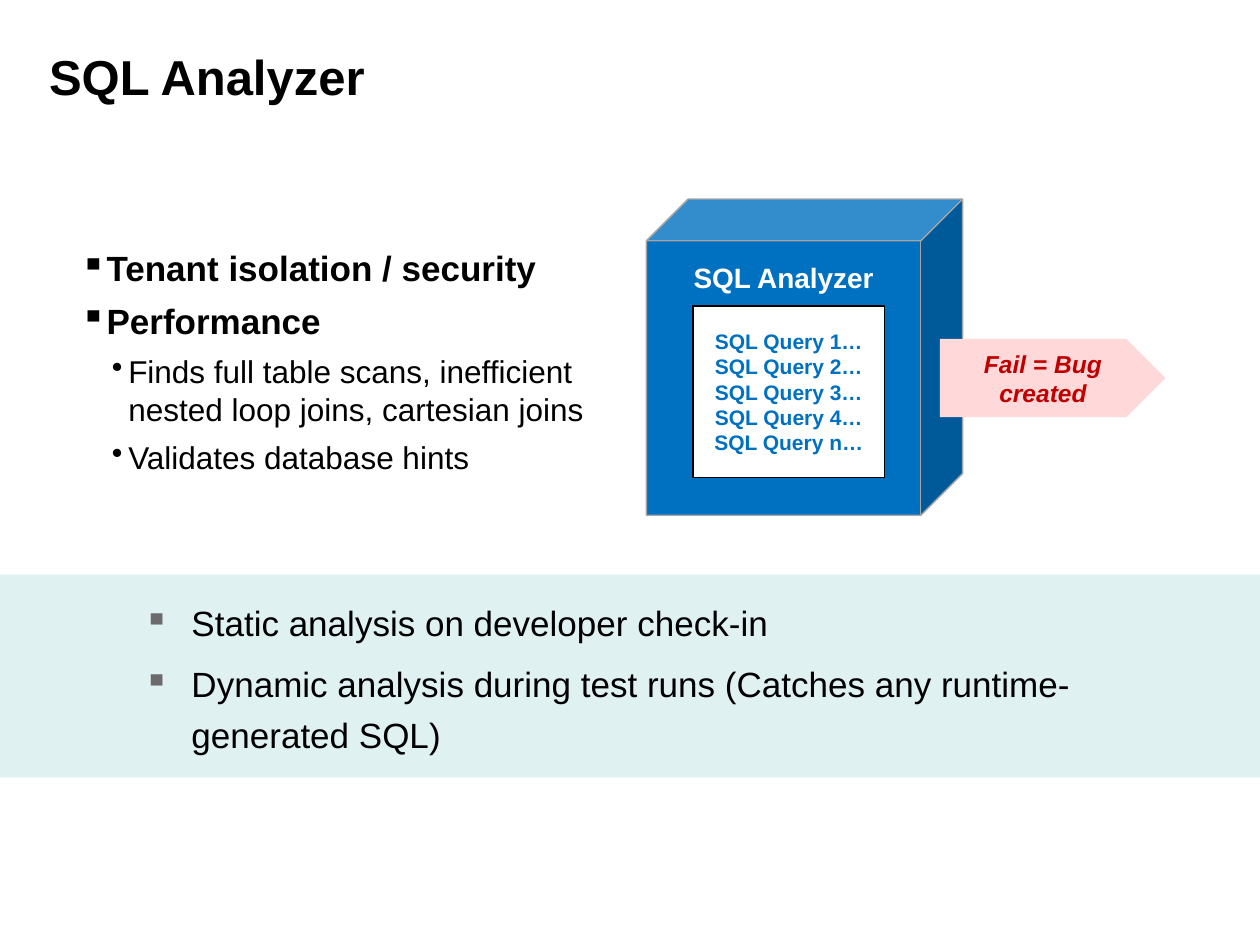
from lxml import etree
from pptx import Presentation
from pptx.dml.color import RGBColor
from pptx.enum.shapes import MSO_SHAPE
from pptx.enum.text import MSO_ANCHOR, PP_ALIGN
from pptx.oxml.ns import qn
from pptx.util import Inches, Pt

RECTANGLE, CUBE, PENTAGON = MSO_SHAPE.RECTANGLE, MSO_SHAPE.CUBE, MSO_SHAPE.PENTAGON
TOP, MIDDLE = MSO_ANCHOR.TOP, MSO_ANCHOR.MIDDLE
LEFT, CENTER = PP_ALIGN.LEFT, PP_ALIGN.CENTER

COLORS = {
    "black": "000000",
    "white": "FFFFFF",
    "band": "BBE0E3",
    "blue": "0070C0",
    "outline": "A6A6A6",
    "bullet": "6B6B6B",
    "pink": "FFD9D9",
    "red": "C00000",
}


class SlideBuilder:
    font_name = "Arial"

    def __init__(self, slide):
        self.slide = slide

    def color(self, name):
        return RGBColor.from_string(COLORS[name])

    def place(self, shape, box):
        for name, value in zip(("left", "top", "width", "height"), box):
            setattr(shape, name, Inches(value))

    def bullet(self, paragraph, character, margin, hanging, color):
        properties = paragraph._p.get_or_add_pPr()
        properties.set("marL", str(Inches(margin)))
        properties.set("indent", str(-Inches(hanging)))
        bullet_color = etree.SubElement(properties, qn("a:buClr"))
        etree.SubElement(bullet_color, qn("a:srgbClr"), val=COLORS[color])
        etree.SubElement(properties, qn("a:buChar"), char=character)

    def format_line(self, paragraph, text, size, color="black", bold=False,
                    italic=False, bullet=None, **layout):
        if bullet:
            self.bullet(paragraph, *bullet)
        for name, value in layout.items():
            setattr(paragraph, name, value)
        run = paragraph.add_run()
        run.text = text
        formats = {"name": self.font_name, "size": Pt(size), "bold": bold, "italic": italic}
        for name, value in formats.items():
            setattr(run.font, name, value)
        run.font.color.rgb = self.color(color)

    def fill_text(self, shape, lines, anchor=TOP, insets=(0.1, 0.05, 0.1, 0.05)):
        frame = shape.text_frame
        frame.word_wrap = True
        frame.vertical_anchor = anchor
        for side, inset in zip(("left", "top", "right", "bottom"), insets):
            setattr(frame, f"margin_{side}", Inches(inset))
        for index, line in enumerate(lines):
            paragraph = frame.add_paragraph() if index else frame.paragraphs[0]
            self.format_line(paragraph, **line)

    def title(self, box, text):
        title = self.slide.shapes.title
        self.place(title, box)
        line = {"text": text, "size": 28, "bold": True, "alignment": LEFT}
        self.fill_text(title, [line], MIDDLE, (0.06, 0.06, 0.1, 0.06))

    def text(self, box, lines, **options):
        shape = self.slide.shapes.add_textbox(*map(Inches, box))
        self.fill_text(shape, lines, **options)

    def shape(self, kind, box, fill, line=None, opacity=None, adjustment=None, lines=()):
        shape = self.slide.shapes.add_shape(kind, *map(Inches, box))
        shape.shadow.inherit = False
        shape.fill.solid()
        shape.fill.fore_color.rgb = self.color(fill)
        if opacity:
            fill_color = shape._element.spPr.find(qn("a:solidFill"))[0]
            etree.SubElement(fill_color, qn("a:alpha"), val=str(opacity * 1000))
        if line:
            shape.line.color.rgb = self.color(line)
            shape.line.width = Pt(0.75)
        else:
            shape.line.fill.background()
        if adjustment:
            shape.adjustments[0] = adjustment
        self.fill_text(shape, lines, MIDDLE)


def main():
    presentation = Presentation()
    presentation.slide_width = Inches(10)
    presentation.slide_height = Inches(7.5)
    slide = presentation.slides.add_slide(presentation.slide_layouts[5])
    builder = SlideBuilder(slide)

    builder.shape(RECTANGLE, (0, 4.56, 10, 1.61), "band", opacity=45)
    builder.title((0.33, 0, 9, 1.2), "SQL Analyzer")

    analyses = [
        "Static analysis on developer check-in",
        "Dynamic analysis during test runs (Catches any runtime-generated SQL)",
    ]
    builder.text((1.06, 4.64, 7.64, 2.02), [
        {"text": text, "size": 20, "bullet": ("▪", 0.39, 0.38, "bullet"),
         "line_spacing": 1.2, "space_before": Pt(6 if index else 0)}
        for index, text in enumerate(analyses)
    ], insets=(0.07, 0.07, 0.15, 0.07))

    builder.shape(CUBE, (5.13, 1.58, 2.51, 2.51), "blue", "outline", adjustment=0.132)
    builder.text((5.32, 2.02, 1.8, 0.37), [
        {"text": "SQL Analyzer", "size": 16, "color": "white", "bold": True, "alignment": CENTER},
    ])

    topic = {"size": 20, "bold": True, "bullet": ("▪", 0.19, 0.19, "black"),
             "space_after": Pt(6)}
    detail = {"size": 18, "level": 1, "bullet": ("•", 0.38, 0.13, "black"),
              "space_after": Pt(6)}
    builder.text((0.54, 1.91, 4.36, 1.94), [
        {"text": "Tenant isolation / security", **topic},
        {"text": "Performance", **topic},
        {"text": "Finds full table scans, inefficient nested loop joins, cartesian joins", **detail},
        {"text": "Validates database hints", **detail},
    ])

    builder.shape(RECTANGLE, (5.5, 2.43, 1.52, 1.36), "white", "black", lines=[
        {"text": f"SQL Query {number}…", "size": 12, "color": "blue", "bold": True,
         "alignment": CENTER}
        for number in (1, 2, 3, 4, "n")
    ])
    builder.shape(PENTAGON, (7.46, 2.69, 1.79, 0.62), "pink", lines=[
        {"text": "Fail = Bug created", "size": 14, "color": "red", "bold": True,
         "italic": True, "alignment": CENTER},
    ])

    presentation.save("out.pptx")


if __name__ == "__main__":
    main()
